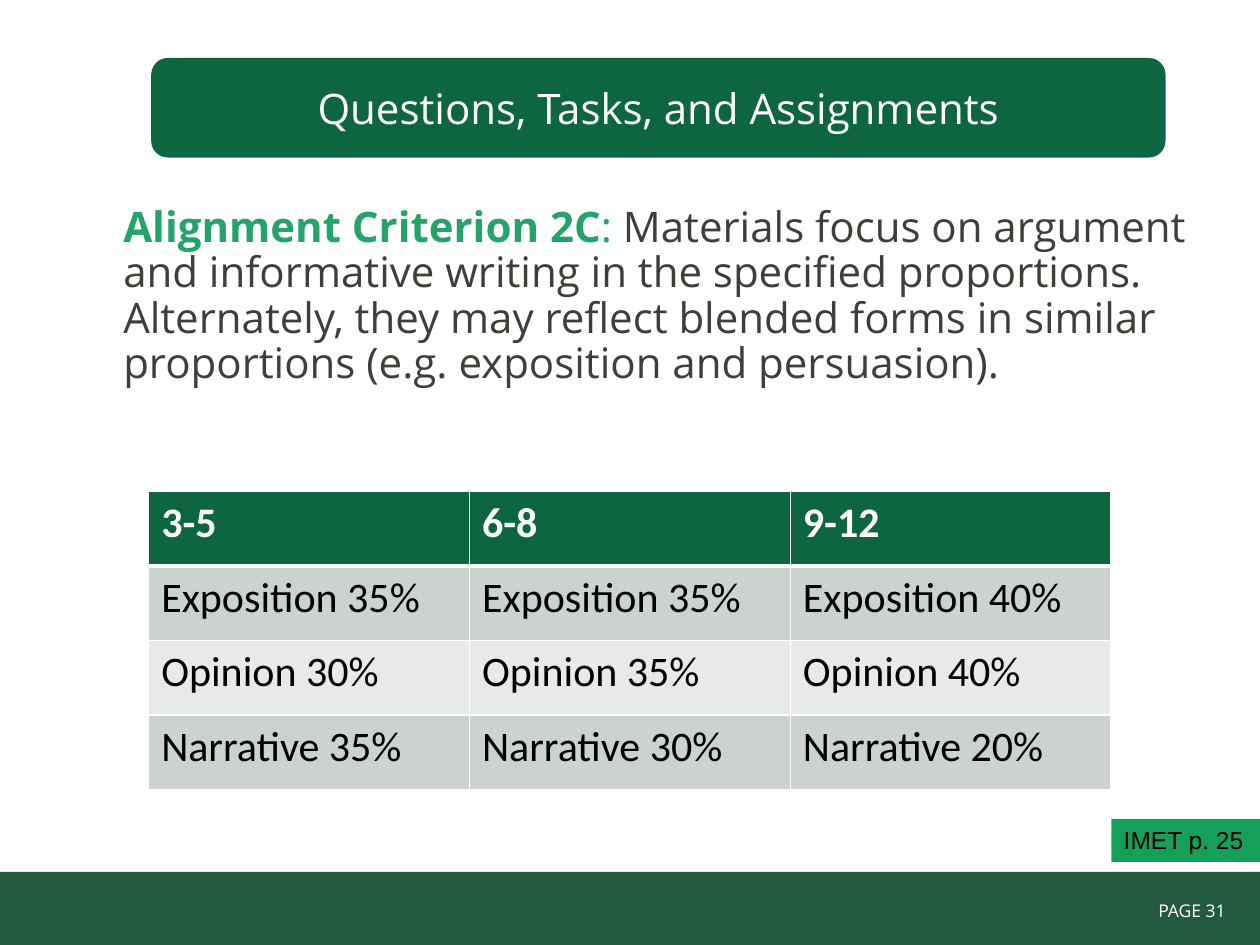
from lxml import etree
from pptx import Presentation
from pptx.dml.color import RGBColor
from pptx.enum.shapes import MSO_SHAPE
from pptx.enum.text import MSO_ANCHOR, PP_ALIGN
from pptx.oxml.ns import qn
from pptx.util import Inches, Pt

WHITE, BLACK, GRAY = "FFFFFF", "000000", "3F3F39"
DEEP_GREEN, BAR_GREEN = "0E6641", "23593E"
TAG_GREEN, TEXT_GREEN = "15A059", "24A469"
ROW_FILLS = ["CCD3CF", "E7EAE9"]

PROPORTIONS = [
    ["3-5", "6-8", "9-12"],
    ["Exposition 35%", "Exposition 35%", "Exposition 40%"],
    ["Opinion 30%", "Opinion 35%", "Opinion 40%"],
    ["Narrative 35%", "Narrative 30%", "Narrative 20%"],
]


def color(value):
    return RGBColor.from_string(value)


def set_values(target, values):
    for name, value in values.items():
        setattr(target, name, value)


def write(text_frame, runs, frame_format=None, paragraph_format=None):
    """Fill one paragraph with (text, colour, font format) runs."""
    set_values(text_frame, {"word_wrap": True, **(frame_format or {})})
    paragraph = text_frame.paragraphs[0]
    set_values(paragraph, {"alignment": PP_ALIGN.LEFT, **(paragraph_format or {})})
    for text, text_color, font_format in runs:
        run = paragraph.add_run()
        run.text = text
        set_values(run.font, font_format)
        run.font.color.rgb = color(text_color)


def font(name, size, bold=False):
    return {"name": name, "size": Pt(size), "bold": bold}


def add_box(slide, box, fill, kind=MSO_SHAPE.RECTANGLE):
    shape = slide.shapes.add_shape(kind, *map(Inches, box))
    shape.shadow.inherit = False
    shape.fill.solid()
    shape.fill.fore_color.rgb = color(fill)
    shape.line.fill.background()
    return shape


def add_title(slide, box):
    # Rounded banner behind the title placeholder
    banner = add_box(slide, box, DEEP_GREEN, MSO_SHAPE.ROUNDED_RECTANGLE)
    title = slide.shapes.title
    title._element.addprevious(banner._element)
    set_values(title, dict(zip(("left", "top", "width", "height"), map(Inches, box))))
    write(title.text_frame,
          [("Questions, Tasks, and Assignments", WHITE, font("Open Sans", 24))],
          {"vertical_anchor": MSO_ANCHOR.MIDDLE}, {"alignment": PP_ALIGN.CENTER})


def add_criterion(slide, box):
    text_box = slide.shapes.add_textbox(*map(Inches, box))
    write(text_box.text_frame, [
        ("Alignment Criterion 2C", TEXT_GREEN, font("Open Sans", 24, True)),
        (": ", TEXT_GREEN, font("Open Sans", 24)),
        ("Materials focus on argument and informative writing in the specified "
         "proportions. Alternately, they may reflect blended forms in similar "
         "proportions (e.g. exposition and persuasion).", GRAY, font("Open Sans", 24)),
    ], {"vertical_anchor": MSO_ANCHOR.MIDDLE}, {"line_spacing": 0.9})


def set_borders(cell, widths):
    properties = cell._tc.get_or_add_tcPr()
    for position, (side, width) in enumerate(widths.items()):
        line = etree.Element(qn(f"a:{side}"), w=str(Pt(width)))
        fill = etree.SubElement(line, qn("a:solidFill"))
        etree.SubElement(fill, qn("a:srgbClr"), val=WHITE)
        properties.insert(position, line)


def add_proportions(slide, box):
    row_count, column_count = len(PROPORTIONS), len(PROPORTIONS[0])
    table = slide.shapes.add_table(row_count, column_count, *map(Inches, box)).table
    for row, texts in enumerate(PROPORTIONS):
        header = row == 0
        fill = DEEP_GREEN if header else ROW_FILLS[(row - 1) % 2]
        for column, text in enumerate(texts):
            cell = table.cell(row, column)
            cell.fill.solid()
            cell.fill.fore_color.rgb = color(fill)
            set_borders(cell, {"lnL": 1, "lnR": 1, "lnT": 3 if row == 1 else 1,
                               "lnB": 3 if header else 1})
            write(cell.text_frame,
                  [(text, WHITE if header else BLACK, font("Calibri", 24, header))])


def add_reference(slide, box):
    tag = add_box(slide, box, TAG_GREEN)
    write(tag.text_frame, [("IMET p. 25", BLACK, font("Arial", 14))],
          {"vertical_anchor": MSO_ANCHOR.TOP})


def add_footer(slide, box):
    left, top, width, height = box
    add_box(slide, box, BAR_GREEN)
    # Page label at the right end of the bar
    label = slide.shapes.add_textbox(Inches(left + width - 1.73), Inches(top + 0.17),
                                     Inches(1.59), Inches(0.27))
    write(label.text_frame, [("PAGE 31 ", WHITE, font("Open Sans", 10))],
          paragraph_format={"alignment": PP_ALIGN.RIGHT})


def main():
    presentation = Presentation()
    presentation.slide_width, presentation.slide_height = Inches(10), Inches(7.5)
    slide = presentation.slides.add_slide(presentation.slide_layouts[5])
    add_footer(slide, (0, 6.92, 10, 0.58))
    add_criterion(slide, (0.88, 1.73, 8.69, 1.25))
    add_reference(slide, (8.82, 6.5, 1.18, 0.34))
    add_title(slide, (1.2, 0.46, 8.05, 0.79))
    add_proportions(slide, (1.18, 3.9, 7.64, 2.37))
    presentation.save("out.pptx")


if __name__ == "__main__":
    main()
